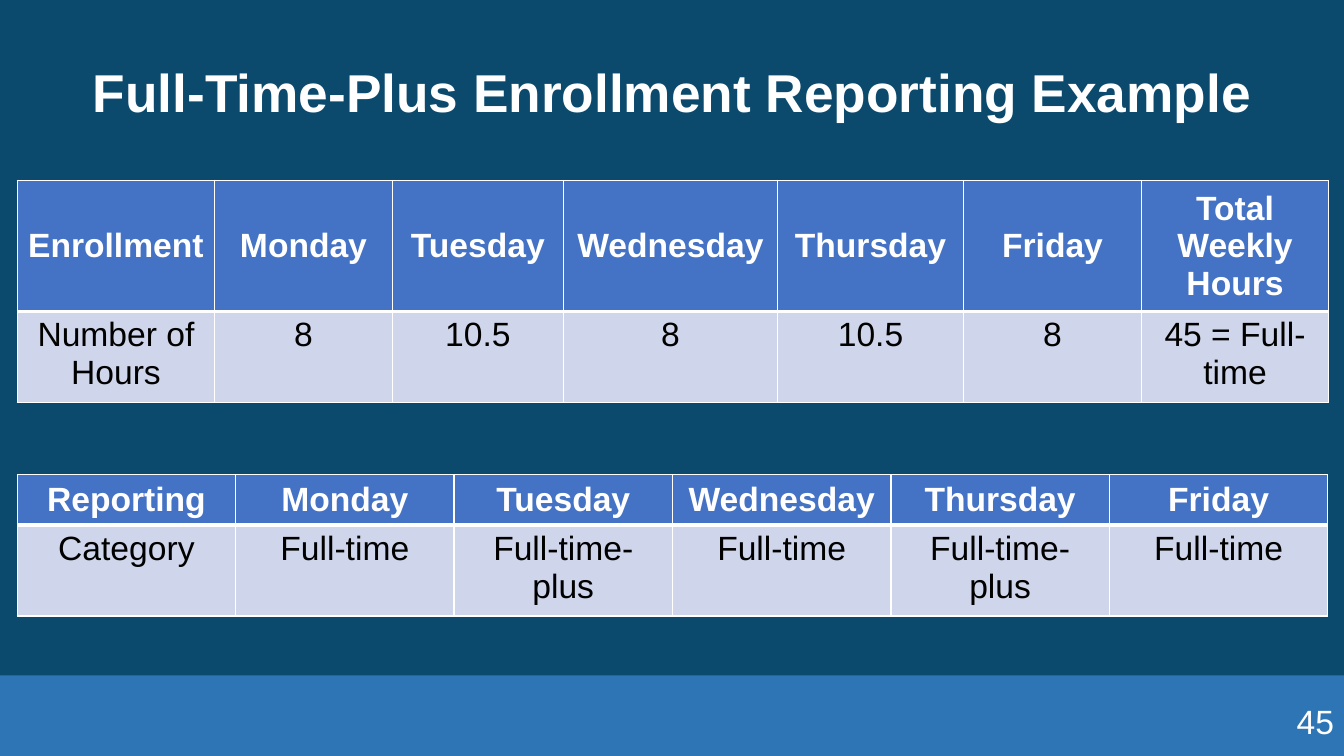
import pptx
import pptx.util
import pptx.dml.color
import pptx.enum.shapes
import pptx.enum.text
import pptx.oxml
import pptx.oxml.ns
from pptx.util import Inches

TITLE = "Full-Time-Plus Enrollment Reporting Example"
PAGE_NUMBER = "45"
FONT = "Arial"
COLORS = {
    "background": "0C4A6D",
    "band": "2E75B6",
    "header": "4472C4",
    "body": "CFD5EA",
    "light": "FFFFFF",
    "dark": "000000",
}
TABLES = [
    {
        "top": 1.79,
        "columns": [1.96, 1.76, 1.7, 2.12, 1.85, 1.76, 1.86],
        "heights": [1.21, 0.85],
        "rows": [
            ["Enrollment", "Monday", "Tuesday", "Wednesday", "Thursday", "Friday", "Total Weekly Hours"],
            ["Number of Hours", "8", "10.5", "8", "10.5", "8", "45 = Full-time"],
        ],
    },
    {
        "top": 4.71,
        "columns": [13 / 6] * 6,
        "heights": [0.47, 0.85],
        "rows": [
            ["Reporting", "Monday", "Tuesday", "Wednesday", "Thursday", "Friday"],
            ["Category", "Full-time", "Full-time-plus", "Full-time", "Full-time-plus", "Full-time"],
        ],
    },
]
SLIDE_WIDTH, SLIDE_HEIGHT = 13.33, 7.5
MARGIN, CONTENT_WIDTH = 0.17, 13
BAND_HEIGHT = 0.8
ALIGN = pptx.enum.text.PP_ALIGN
ANCHOR = pptx.enum.text.MSO_ANCHOR


def rgb(name):
    return pptx.dml.color.RGBColor.from_string(COLORS[name])


def write(text_frame, text, size, color, bold, align):
    text_frame.text = text
    paragraph = text_frame.paragraphs[0]
    paragraph.alignment = align
    font = paragraph.runs[0].font
    font.name = FONT
    font.size = pptx.util.Pt(size)
    font.bold = bold
    font.color.rgb = rgb(color)
    return paragraph


def add_text(slide, box, text, size, bold, align, anchor):
    shape = slide.shapes.add_textbox(*map(Inches, box))
    text_frame = shape.text_frame
    text_frame.word_wrap = True
    text_frame.vertical_anchor = anchor
    return write(text_frame, text, size, "light", bold, align)


def set_borders(cell, widths):
    properties = cell._tc.get_or_add_tcPr()
    for side, width in widths.items():
        properties.append(pptx.oxml.parse_xml(
            f'<a:ln{side} {pptx.oxml.ns.nsdecls("a")} w="{pptx.util.Pt(width)}">'
            f'<a:solidFill><a:srgbClr val="{COLORS["light"]}"/></a:solidFill></a:ln{side}>'
        ))


def add_table(slide, data):
    rows, columns, heights = data["rows"], data["columns"], data["heights"]
    frame = slide.shapes.add_table(
        len(rows), len(columns), Inches(MARGIN), Inches(data["top"]),
        Inches(CONTENT_WIDTH), Inches(sum(heights)),
    )
    table = frame.table
    for column, width in zip(table.columns, columns):
        column.width = Inches(width)
    for row_index, texts in enumerate(rows):
        table.rows[row_index].height = Inches(heights[row_index])
        header = row_index == 0
        for column_index, text in enumerate(texts):
            cell = table.cell(row_index, column_index)
            set_borders(cell, {"L": 1, "R": 1, "T": 1 if header else 3, "B": 3 if header else 1})
            cell.fill.solid()
            cell.fill.fore_color.rgb = rgb("header" if header else "body")
            cell.vertical_anchor = ANCHOR.MIDDLE if header else ANCHOR.TOP
            write(cell.text_frame, text, 24, "light" if header else "dark", header, ALIGN.CENTER)


def main():
    presentation = pptx.Presentation()
    presentation.slide_width = Inches(SLIDE_WIDTH)
    presentation.slide_height = Inches(SLIDE_HEIGHT)
    slide = presentation.slides.add_slide(presentation.slide_layouts[6])
    slide.background.fill.solid()
    slide.background.fill.fore_color.rgb = rgb("background")

    band = slide.shapes.add_shape(
        pptx.enum.shapes.MSO_SHAPE.RECTANGLE, 0, Inches(SLIDE_HEIGHT - BAND_HEIGHT),
        Inches(SLIDE_WIDTH), Inches(BAND_HEIGHT),
    )
    band.shadow.inherit = False
    band.fill.solid()
    band.fill.fore_color.rgb = rgb("band")
    band.line.fill.background()

    title = add_text(slide, (MARGIN, 0.22, CONTENT_WIDTH, 1.45), TITLE, 38, True, ALIGN.CENTER, ANCHOR.MIDDLE)
    title.line_spacing = 0.9
    for data in TABLES:
        add_table(slide, data)
    add_text(slide, (SLIDE_WIDTH - 3, 6.9, 3, 0.4), PAGE_NUMBER, 24, False, ALIGN.RIGHT, ANCHOR.TOP)
    presentation.save("out.pptx")


if __name__ == "__main__":
    main()
